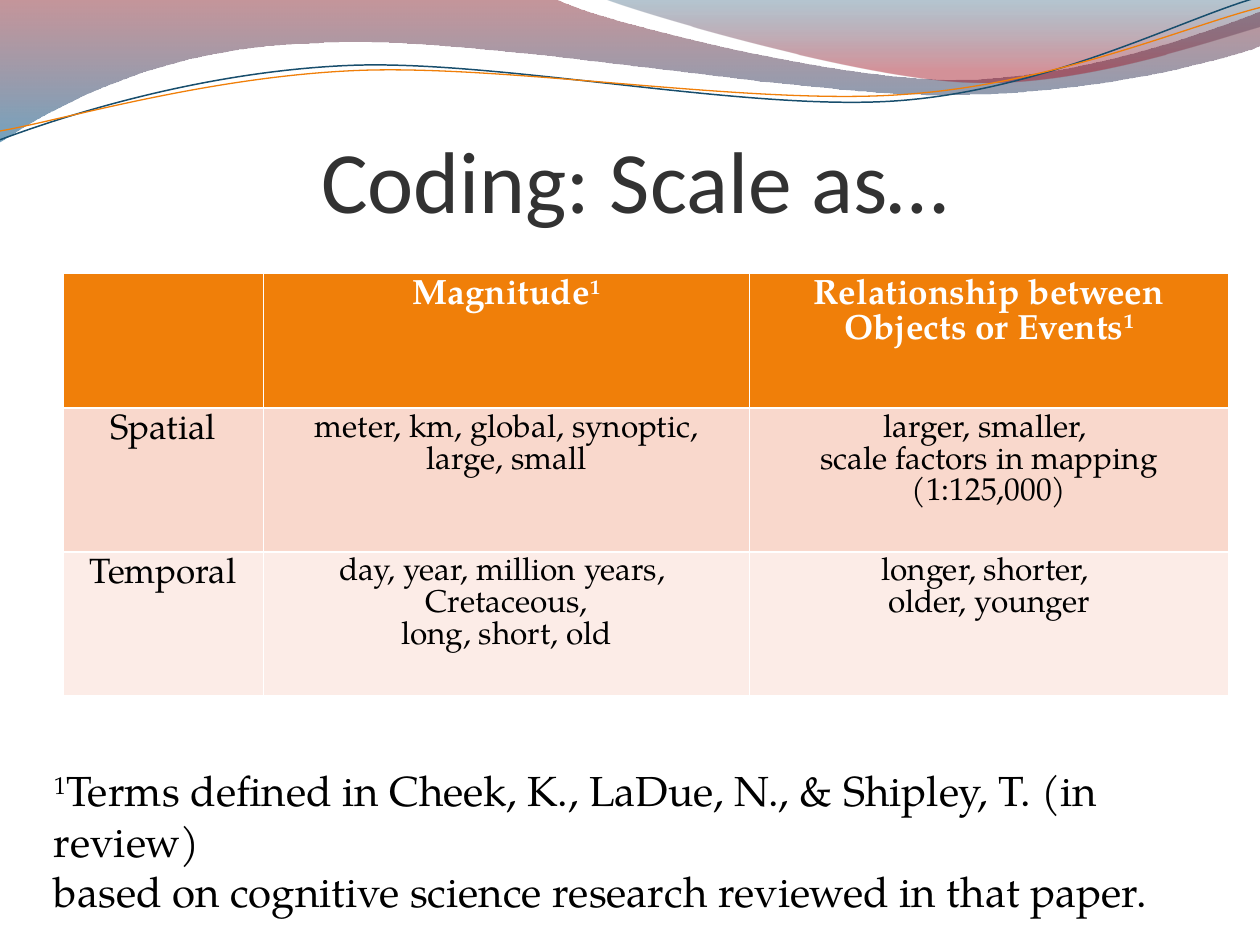
import pptx
import pptx.util
import pptx.dml.color
import pptx.enum.text
import pptx.oxml.ns
from lxml import etree

COLORS = {
    "paper": "FFFFFF", "ink": "000000", "title": "323232",
    "orange": "F07F09", "navy": "184E6D", "spatial": "F9D8CC", "temporal": "FCECE7",
    "wine": "7E1621", "blue": "005689", "deep": "094467", "red": "A10F1F",
}
SERIF = "TeX Gyre Pagella"
CENTER = pptx.enum.text.PP_ALIGN.CENTER
qn = pptx.oxml.ns.qn

deck = pptx.Presentation()
deck.slide_width = pptx.util.Inches(10)
deck.slide_height = pptx.util.Inches(7.5)
page = deck.slides.add_slide(deck.slide_layouts[5])
unit = deck.slide_width // 1000


def rgb(name):
    return pptx.dml.color.RGBColor.from_string(COLORS[name])


def write(para, text, size=18, font=SERIF, color="ink", bold=False, align=None):
    para.alignment = align
    for index, piece in enumerate(text.split("^")):
        if piece:
            span = para.add_run()
            span.text = piece
            span.font.size = pptx.util.Pt(size)
            span.font.name = font
            span.font.bold = bold
            span.font.color.rgb = rgb(color)
            if index % 2:
                span.font._element.set("baseline", "30000")


waves = [
    {"start": (0, 0), "closed": True, "stops": [(0, "wine", 45), (1, "blue", 55)],
     "steps": [(440, -1), (476, 17, 664, 63, 758, 63), (853, 63, 958, 26, 1000, 9),
               (1001, 36), (983, 44, 870, 76, 746, 75), (622, 75, 382, 28, 257, 34),
               (129, 36, 46, 83, -1, 113)]},
    {"start": (479, -1), "closed": True, "stops": [(0, "deep", 30), (0.8, "red", 45)],
     "steps": [(509, 11, 682, 62, 769, 65), (856, 69, 961, 32, 1000, 21), (1000, 0)]},
    {"start": (0, 111), "closed": False, "line": ("navy", 0.85),
     "steps": [(48, 93, 158, 57, 277, 52), (395, 47, 593, 89, 713, 80),
               (833, 71, 938, 15, 998, -2)]},
    {"start": (0, 104), "closed": False, "line": ("orange", 0.75),
     "steps": [(47, 96, 164, 61, 283, 56), (403, 51, 597, 84, 717, 75),
               (836, 67, 941, 21, 1000, 6)]},
]
for wave in waves:
    points = [step[i:i + 2] for step in wave["steps"] for i in range(0, len(step), 2)]
    builder = page.shapes.build_freeform(*wave["start"], scale=unit)
    builder.add_line_segments(points, close=wave["closed"])
    shape = builder.convert_to_shape()
    shape.shadow.inherit = False
    segments = iter(list(shape._element.iter(qn("a:lnTo"))))
    for step in wave["steps"]:
        segment = next(segments)
        if len(step) == 6:
            segment.tag = qn("a:cubicBezTo")
            for extra in (next(segments), next(segments)):
                segment.append(extra[0])
                extra.getparent().remove(extra)
    if wave["closed"]:
        shape.line.fill.background()
        shape.fill.gradient()
        shape.fill.gradient_angle = 270
        for stop, (position, color, opacity) in zip(shape.fill.gradient_stops, wave["stops"]):
            stop.position = position
            stop.color.rgb = rgb(color)
        tints = shape._element.spPr.find(qn("a:gradFill")).iter(qn("a:srgbClr"))
        for tint, (position, color, opacity) in zip(tints, wave["stops"]):
            etree.SubElement(tint, qn("a:alpha"), val=str(opacity * 1000))
    else:
        shape.fill.background()
        color, thickness = wave["line"]
        shape.line.color.rgb = rgb(color)
        shape.line.width = pptx.util.Pt(thickness)

rows = [
    (107, "orange", ["", "Magnitude^1", "Relationship between Objects or Events^1"]),
    (114, "spatial", ["Spatial", "meter, km, global, synoptic,\nlarge, small",
                      "larger, smaller, \nscale factors in mapping (1:125,000)"]),
    (114, "temporal", ["Temporal", "day, year, million years, \nCretaceous,\nlong, short, old",
                       "longer, shorter, \nolder, younger"]),
]
columns = [159, 386, 380]
table = page.shapes.add_table(3, 3, 50 * unit, 217 * unit, 925 * unit, 335 * unit).table
for column, width in zip(table.columns, columns):
    column.width = width * unit
for r, (height, shade, texts) in enumerate(rows):
    table.rows[r].height = height * unit
    header = r == 0
    for c, text in enumerate(texts):
        cell = table.cell(r, c)
        cell.fill.solid()
        cell.fill.fore_color.rgb = rgb(shade)
        for index, line in enumerate(text.split("\n")):
            para = cell.text_frame.paragraphs[0] if index == 0 else cell.text_frame.add_paragraph()
            write(para, line, size=20 if header or c == 0 else 18, bold=header,
                  color="paper" if header else "ink", align=CENTER)

title = page.shapes.title
title.left, title.top, title.width, title.height = (n * unit for n in (50, 77, 908, 106))
frame = title.text_frame
frame.auto_size = pptx.enum.text.MSO_AUTO_SIZE.NONE
frame.vertical_anchor = pptx.enum.text.MSO_ANCHOR.BOTTOM
frame.margin_left = frame.margin_right = frame.margin_bottom = 0
frame.margin_top = 5 * unit
write(frame.paragraphs[0], "Coding: Scale as…", size=50, font="Calibri", color="title", align=CENTER)

box = page.shapes.add_textbox(33 * unit, 602 * unit, 942 * unit, 91 * unit)
box.text_frame.word_wrap = True
write(box.text_frame.paragraphs[0],
      "^1^Terms defined in Cheek, K., LaDue, N., & Shipley, T. (in review)", size=24)
write(box.text_frame.add_paragraph(),
      "based on cognitive science research reviewed in that paper.", size=24)

deck.save("out.pptx")
